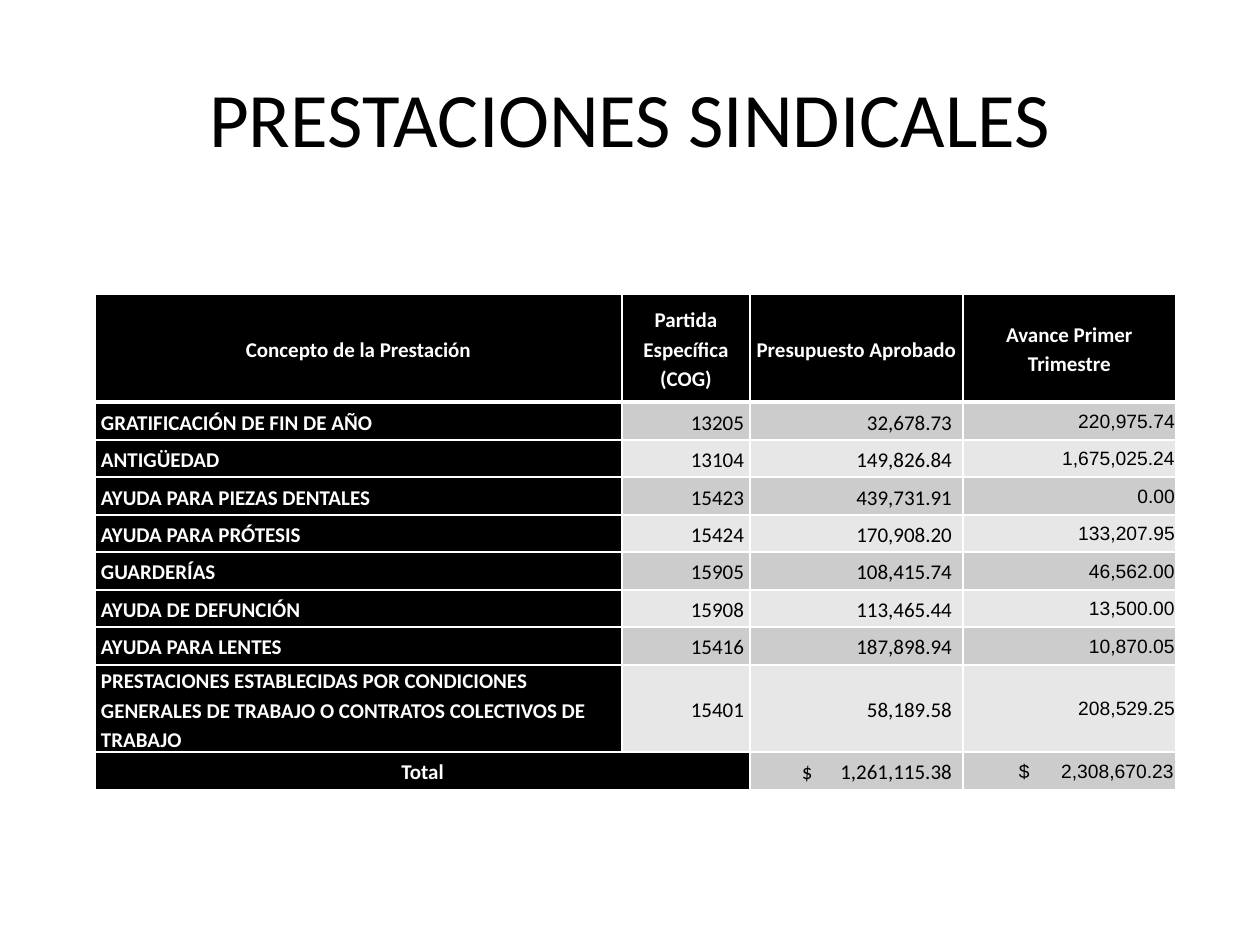
from lxml.etree import SubElement
from pptx import Presentation
from pptx.dml.color import RGBColor
from pptx.enum.text import MSO_ANCHOR as Anchor, PP_ALIGN as Align
from pptx.oxml.ns import qn
from pptx.util import Pt

EMU_PER_PX = 914400 / 126
BLACK, WHITE, DARK_BAND, LIGHT_BAND = "000000", "FFFFFF", "CCCCCC", "E7E7E7"
COLUMN_WIDTHS = [527, 128, 213, 213]
ROW_HEIGHTS = [108, 38, 37, 38, 37, 38, 37, 38, 87, 38]
HEADINGS = ["Concepto de la Prestación", "Partida Específica (COG)",
            "Presupuesto Aprobado", "Avance Primer Trimestre"]
BENEFITS = [
    ("GRATIFICACIÓN DE FIN DE AÑO", "13205", "32,678.73", "220,975.74"),
    ("ANTIGÜEDAD", "13104", "149,826.84", "1,675,025.24"),
    ("AYUDA PARA PIEZAS DENTALES", "15423", "439,731.91", "0.00"),
    ("AYUDA PARA PRÓTESIS", "15424", "170,908.20", "133,207.95"),
    ("GUARDERÍAS", "15905", "108,415.74", "46,562.00"),
    ("AYUDA DE DEFUNCIÓN", "15908", "113,465.44", "13,500.00"),
    ("AYUDA PARA LENTES", "15416", "187,898.94", "10,870.05"),
    ("PRESTACIONES ESTABLECIDAS POR CONDICIONES GENERALES DE TRABAJO "
     "O CONTRATOS COLECTIVOS DE TRABAJO", "15401", "58,189.58", "208,529.25"),
]
BUDGET_TOTAL, PROGRESS_TOTAL = "$\t1,261,115.38", "$\t2,308,670.23"


def px(length):
    """Convert slide pixels to EMU."""
    return round(length * EMU_PER_PX)


def rgb(code):
    """Turn a hex string into a colour."""
    return RGBColor.from_string(code)


def style_text(paragraph, size, color, align, font="Calibri", bold=False):
    """Format a paragraph and its runs."""
    paragraph.alignment = align
    for run in paragraph.runs:
        run.font.name = font
        run.font.size = Pt(size)
        run.font.bold = bold
        run.font.color.rgb = rgb(color)


def add_title(slide, text):
    """Add the centred slide title."""
    frame = slide.shapes.add_textbox(px(63), px(38), px(1134), px(157)).text_frame
    frame.word_wrap = True
    frame.vertical_anchor = Anchor.MIDDLE
    frame.text = text
    style_text(frame.paragraphs[0], 44, BLACK, Align.CENTER)


def set_borders(cell, top=1, bottom=1):
    """Draw white borders around a cell."""
    properties = cell._tc.get_or_add_tcPr()
    for side, width in (("L", 1), ("R", 1), ("T", top), ("B", bottom)):
        line = SubElement(properties, qn(f"a:ln{side}"), w=str(Pt(width)))
        fill = SubElement(line, qn("a:solidFill"))
        SubElement(fill, qn("a:srgbClr"), val=WHITE)


def fill_cell(cell, text, fill, margins=(6, 6), **borders):
    """Set the text, fill, margins and borders of a cell."""
    set_borders(cell, **borders)
    cell.fill.solid()
    cell.fill.fore_color.rgb = rgb(fill)
    cell.vertical_anchor = Anchor.MIDDLE
    cell.margin_left, cell.margin_right = map(px, margins)
    cell.margin_top = cell.margin_bottom = 0
    cell.text_frame.text = text
    return cell.text_frame.paragraphs[0]


def add_label(cell, text, align, **borders):
    """Write a bold white label on black."""
    label = fill_cell(cell, text, BLACK, **borders)
    label.line_spacing = 1.15
    style_text(label, 12, WHITE, align, bold=True)


def add_figure(cell, text, fill, margins=(6, 6), **borders):
    """Write a right-aligned Calibri figure."""
    figure = fill_cell(cell, text, fill, margins, **borders)
    figure.line_spacing = 1.15
    style_text(figure, 12, BLACK, Align.RIGHT)
    return figure


def add_progress(cell, text, fill, margins=(1, 1), **borders):
    """Write a right-aligned Arial figure for the quarter."""
    figure = fill_cell(cell, text, fill, margins, **borders)
    cell.margin_top = px(1)
    style_text(figure, 11, BLACK, Align.RIGHT, font="Arial")
    return figure


def align_total(figure, stop):
    """Keep the currency sign left and the amount at a right tab stop."""
    figure.alignment = Align.LEFT
    tabs = SubElement(figure._p.get_or_add_pPr(), qn("a:tabLst"))
    SubElement(tabs, qn("a:tab"), pos=str(px(stop)), algn="r")


def add_benefits_table(slide):
    """Add the table of benefits with its total row."""
    table = slide.shapes.add_table(
        len(ROW_HEIGHTS), len(COLUMN_WIDTHS), px(95), px(294),
        px(sum(COLUMN_WIDTHS)), px(sum(ROW_HEIGHTS))).table
    for column, width in zip(table.columns, COLUMN_WIDTHS):
        column.width = px(width)
    for row, height in zip(table.rows, ROW_HEIGHTS):
        row.height = px(height)
    for column, heading in enumerate(HEADINGS):
        add_label(table.cell(0, column), heading, Align.CENTER, bottom=3)
    for row, (concept, code, budget, progress) in enumerate(BENEFITS, 1):
        band = DARK_BAND if row % 2 else LIGHT_BAND
        top = 3 if row == 1 else 1
        align = Align.LEFT if row == len(BENEFITS) else Align.JUSTIFY
        add_label(table.cell(row, 0), concept, align, top=top)
        add_figure(table.cell(row, 1), code, band, top=top)
        add_figure(table.cell(row, 2), budget, band, (6, 11), top=top)
        add_progress(table.cell(row, 3), progress, band, top=top)
    last = len(BENEFITS) + 1
    table.cell(last, 0).merge(table.cell(last, 1))
    add_label(table.cell(last, 0), "Total", Align.CENTER)
    align_total(add_figure(table.cell(last, 2), BUDGET_TOTAL, DARK_BAND, (52, 6)), 150)
    align_total(add_progress(table.cell(last, 3), PROGRESS_TOTAL, DARK_BAND, (56, 1)), 155)


def main():
    """Build and save the slide."""
    deck = Presentation()
    deck.slide_width, deck.slide_height = px(1260), px(945)
    slide = deck.slides.add_slide(deck.slide_layouts[6])
    add_title(slide, "PRESTACIONES SINDICALES")
    add_benefits_table(slide)
    deck.save("out.pptx")


if __name__ == "__main__":
    main()
